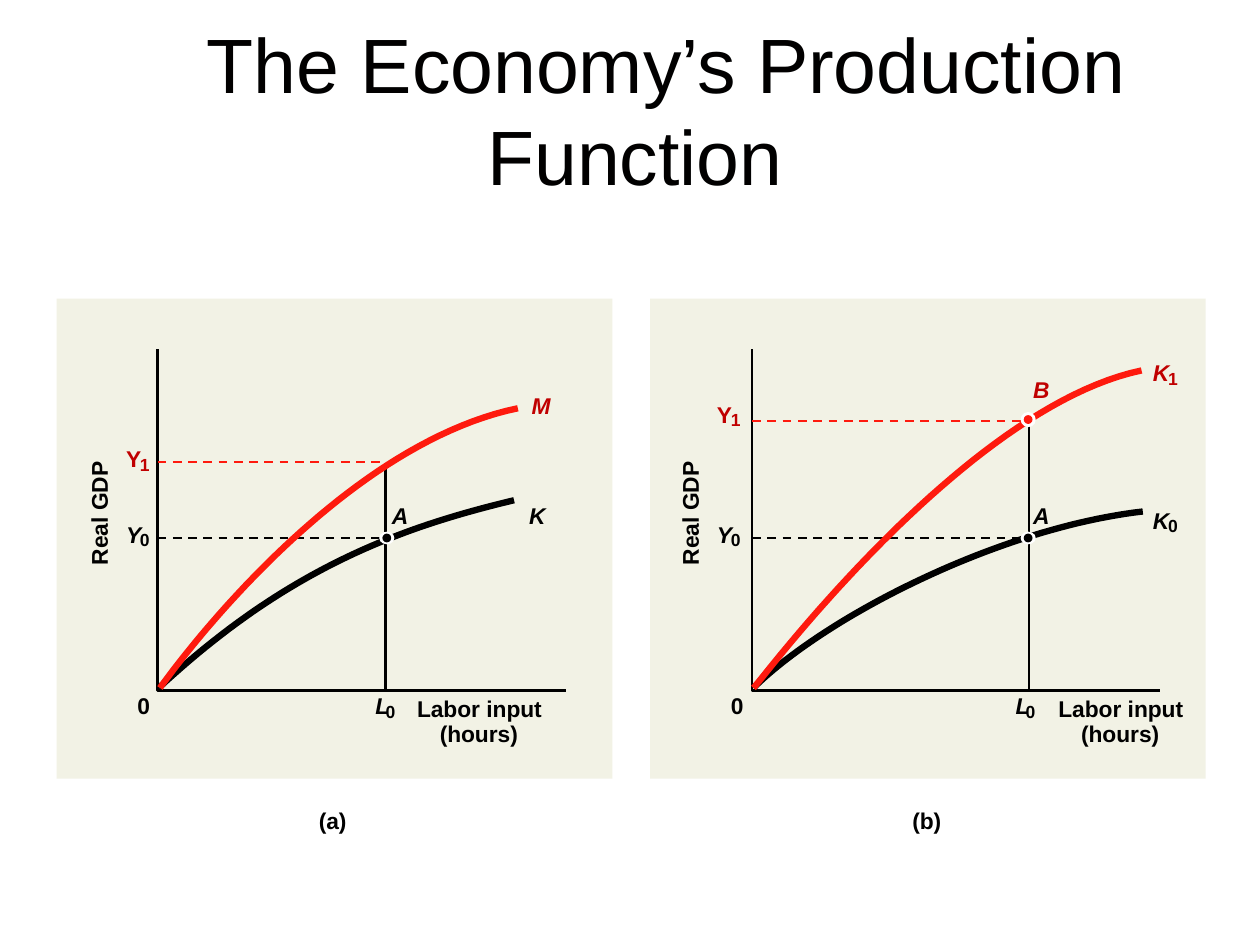
from lxml.etree import SubElement
from pptx import Presentation
from pptx.dml.color import RGBColor
from pptx.enum.dml import MSO_LINE
from pptx.enum.shapes import MSO_CONNECTOR, MSO_SHAPE
from pptx.enum.text import MSO_ANCHOR, MSO_AUTO_SIZE, PP_ALIGN
from pptx.oxml.ns import qn
from pptx.util import Inches, Pt

BLACK = RGBColor(0x00, 0x00, 0x00)
WHITE = RGBColor(0xFF, 0xFF, 0xFF)
CREAM = RGBColor(0xF2, 0xF2, 0xE5)
RED = RGBColor(0xFE, 0x1A, 0x0E)
DARK_RED = RGBColor(0xC0, 0x00, 0x00)
TITLE_COLOR = RGBColor(0x01, 0x00, 0x00)

TITLE = "The Economy’s Production Function"
PANEL_TOP, PANEL_WIDTH, PANEL_HEIGHT = 2.37, 4.41, 3.81
AXIS_TOP, AXIS_BASE, AXIS_LENGTH = 2.77, 5.48, 3.24
THIN, THICK = 1.25, 3.63
SUBSCRIPT_OFFSET = {"Y": 0.11, "L": 0.08, "K": 0.12}

PANELS = [
    {
        "caption": "(a)", "left": 0.45, "axis": 1.25, "labor": 3.06, "guide_top": 3.7,
        "y_left": 1.0, "gdp_left": 0.35, "l_left": 2.98, "input_left": 3.31,
        "levels": [("1", 3.67, 3.53, RED, DARK_RED, False),
                   ("0", 4.27, 4.13, BLACK, BLACK, True)],
        "lower": [(4.08, 3.97), (3.16, 4.19), (2.27, 4.52), (1.26, 5.46)],
        "upper": [(4.11, 3.24), (2.67, 3.54), (1.39, 5.29), (1.27, 5.46)],
        "curve_labels": [("K", "", 4.2, 3.98, 0.18, BLACK), ("M", "", 4.22, 3.11, 0.2, DARK_RED)],
        "points": [("A", 3.07, 4.27, 0.1, 3.11, 3.98, BLACK, BLACK)],
    },
    {
        "caption": "(b)", "left": 5.16, "axis": 5.97, "labor": 8.17, "guide_top": 3.32,
        "y_left": 5.69, "gdp_left": 5.04, "l_left": 8.06, "input_left": 8.4,
        "levels": [("1", 3.34, 3.18, RED, DARK_RED, False),
                   ("0", 4.27, 4.13, BLACK, BLACK, True)],
        "lower": [(9.07, 4.06), (7.94, 4.19), (6.57, 4.88), (5.98, 5.46)],
        "upper": [(9.06, 2.94), (7.64, 3.24), (6.02, 5.43), (5.98, 5.46)],
        "curve_labels": [("K", "0", 9.15, 4.02, 0.13, BLACK), ("K", "1", 9.15, 2.85, 0.13, DARK_RED)],
        "points": [("B", 8.16, 3.33, 0.12, 8.2, 2.98, RED, DARK_RED),
                   ("A", 8.16, 4.27, 0.1, 8.2, 3.98, BLACK, BLACK)],
    },
]


def add_span(para, text, color, **formats):
    span = para.add_run()
    span.text = text
    span.font.color.rgb = color
    for name, value in {"name": "Arial", **formats}.items():
        setattr(span.font, name, value)


def add_label(page, text, left, top, width, color=BLACK, size=13, italic=False, rotation=0):
    height = 0.22 if size == 13 else 0.17
    box = page.shapes.add_textbox(Inches(left), Inches(top), Inches(width), Inches(height))
    box.rotation = rotation
    frame_format = {"margin_left": 0, "margin_right": 0, "margin_top": 0, "margin_bottom": 0,
                    "word_wrap": False, "auto_size": MSO_AUTO_SIZE.SHAPE_TO_FIT_TEXT}
    for name, value in frame_format.items():
        setattr(box.text_frame, name, value)
    add_span(box.text_frame.paragraphs[0], text, color, size=Pt(size), bold=True, italic=italic)


def add_symbol(page, letter, subscript, left, top, width, color=BLACK, italic=True):
    add_label(page, letter, left, top, width, color, italic=italic)
    if subscript:
        add_label(page, subscript, left + SUBSCRIPT_OFFSET[letter], top + 0.07, 0.11, color, size=10)


def add_filled(page, kind, left, top, width, height, color):
    shape = page.shapes.add_shape(kind, Inches(left), Inches(top), Inches(width), Inches(height))
    shape.shadow.inherit = False
    shape.fill.solid()
    shape.fill.fore_color.rgb = color
    shape.line.fill.background()


def add_path(page, points, color, weight):
    corners = [(Inches(x), Inches(y)) for x, y in points]
    builder = page.shapes.build_freeform(*corners[0])
    builder.add_line_segments(corners[1:], close=False)
    outline = builder.convert_to_shape()
    outline.shadow.inherit = False
    outline.fill.background()
    outline.line.color.rgb = color
    outline.line.width = Pt(weight)


def curve_points(controls, steps=48):
    points = []
    for step in range(steps + 1):
        t = step / steps
        weights = ((1 - t) ** 3, 3 * t * (1 - t) ** 2, 3 * t ** 2 * (1 - t), t ** 3)
        points.append(tuple(sum(w * p[axis] for w, p in zip(weights, controls)) for axis in (0, 1)))
    return points


def add_guide(page, start, end, color, dash=None):
    guide = page.shapes.add_connector(MSO_CONNECTOR.STRAIGHT, *map(Inches, start + end))
    guide.line.color.rgb = color
    guide.line.width = Pt(THIN)
    if dash:
        guide.line.dash_style = dash
    SubElement(guide._element.spPr, qn("a:effectLst"))


def add_title(page):
    box = page.shapes.add_textbox(Inches(0.25), Inches(0.24), Inches(9.58), Inches(1.25))
    box.text_frame.word_wrap = True
    box.text_frame.vertical_anchor = MSO_ANCHOR.MIDDLE
    para = box.text_frame.paragraphs[0]
    para_format = {"alignment": PP_ALIGN.CENTER, "line_spacing": Pt(52.6), "space_before": Pt(4)}
    for name, value in para_format.items():
        setattr(para, name, value)
    para._p.get_or_add_pPr().set("indent", str(Inches(0.5)))
    add_span(para, TITLE, TITLE_COLOR, size=Pt(44))


def add_panel(page, panel):
    left, axis, labor = panel["left"], panel["axis"], panel["labor"]
    add_filled(page, MSO_SHAPE.RECTANGLE, left, PANEL_TOP, PANEL_WIDTH, PANEL_HEIGHT, CREAM)
    add_path(page, [(axis, AXIS_TOP), (axis, AXIS_BASE), (axis + AXIS_LENGTH, AXIS_BASE)], BLACK, THIN)
    add_label(page, panel["caption"], left + 2.08, 6.4, 0.28)
    add_label(page, "Real GDP", panel["gdp_left"], 3.94, 0.87, rotation=270)
    add_label(page, "0", left + 0.64, 5.49, 0.15)
    add_symbol(page, "L", "0", panel["l_left"], 5.49, 0.11)
    add_label(page, "Labor input", panel["input_left"], 5.51, 1.05)
    add_label(page, "(hours)", panel["input_left"] + 0.18, 5.71, 0.68)

    add_path(page, curve_points(panel["lower"]), BLACK, THICK)
    add_guide(page, (labor, panel["guide_top"]), (labor, AXIS_BASE), BLACK)
    for subscript, level, top, line_color, text_color, italic in panel["levels"]:
        add_guide(page, (axis, level), (labor, level), line_color, MSO_LINE.DASH)
        add_symbol(page, "Y", subscript, panel["y_left"], top, 0.12, text_color, italic)
    add_path(page, curve_points(panel["upper"]), RED, THICK)
    for label in panel["curve_labels"]:
        add_symbol(page, *label)
    for name, x, y, halo, label_left, label_top, dot_color, text_color in panel["points"]:
        for width, height, color in ((0.12, halo, WHITE), (0.07, 0.07, dot_color)):
            add_filled(page, MSO_SHAPE.OVAL, x - width / 2, y - height / 2, width, height, color)
        add_label(page, name, label_left, label_top, 0.18, text_color, italic=True)


def main():
    deck = Presentation()
    deck.slide_width, deck.slide_height = Inches(10), Inches(7.5)
    page = deck.slides.add_slide(deck.slide_layouts[6])
    add_title(page)
    for panel in PANELS:
        add_panel(page, panel)
    deck.save("out.pptx")


if __name__ == "__main__":
    main()
